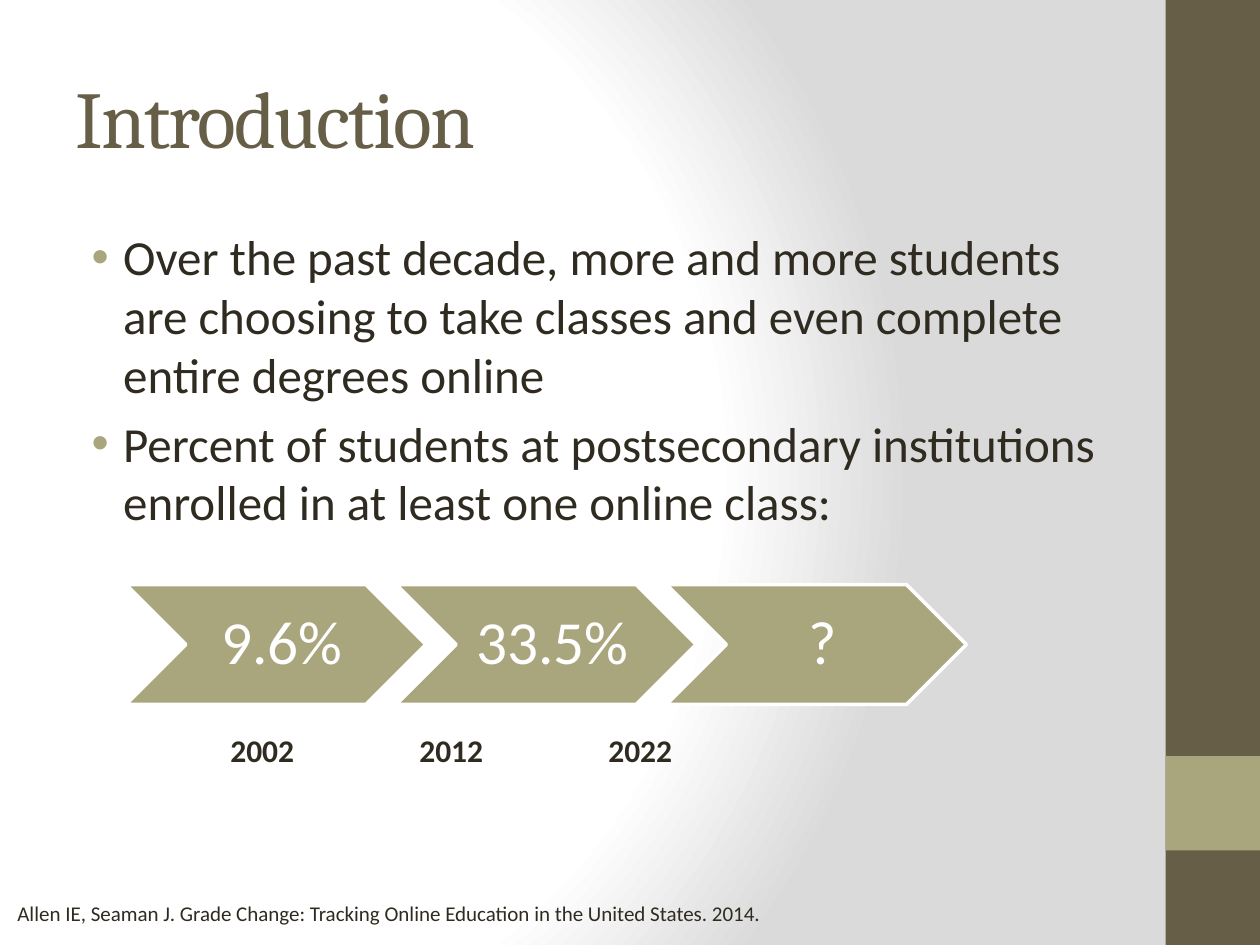
from dataclasses import dataclass, field

from pptx import Presentation
from pptx.dml.color import RGBColor
from pptx.enum.shapes import MSO_SHAPE
from pptx.enum.text import MSO_ANCHOR, PP_ALIGN
from pptx.oxml import parse_xml
from pptx.oxml.ns import nsdecls
from pptx.util import Inches, Pt

COLUMNS, ROWS = 40, 30
SLIDE_WIDTH, SLIDE_HEIGHT = Inches(10), Inches(7.5)

BROWN, OLIVE, INK, WHITE, GREY = "675E47", "A9A57C", "2F2B20", "FFFFFF", "DADADA"


@dataclass(frozen=True)
class Area:
    """A rectangle in grid columns and rows."""
    column: float
    row: float
    columns: float
    rows: float

    def lengths(self) -> tuple[int, ...]:
        across, down = SLIDE_WIDTH / COLUMNS, SLIDE_HEIGHT / ROWS
        return (round(self.column * across), round(self.row * down),
                round(self.columns * across), round(self.rows * down))


@dataclass(frozen=True)
class TextStyle:
    size: float
    color: str = INK
    font: str = "Calibri"
    bold: bool = False
    frame: dict = field(default_factory=dict)
    paragraph: dict = field(default_factory=dict)


HEADING = TextStyle(46, BROWN, "Cambria",
                    frame={"vertical_anchor": MSO_ANCHOR.MIDDLE})
BODY = TextStyle(28, paragraph={"space_before": Pt(5.6)})
CITATION = TextStyle(12)
YEARS = TextStyle(18, bold=True)
SHARE = TextStyle(
    35, WHITE,
    frame={"vertical_anchor": MSO_ANCHOR.MIDDLE, "margin_left": Inches(0.15),
           "margin_right": Inches(0.05), "margin_top": Inches(0.05),
           "margin_bottom": Inches(0.05)},
    paragraph={"alignment": PP_ALIGN.CENTER, "line_spacing": 0.9,
               "space_after": Pt(12.25)})

SIDE_BAR = Area(37, 0, 3, ROWS)
SIDE_ACCENT = Area(37, 24, 3, 3)
FIRST_CHEVRON = Area(4, 18.56, 9.52, 3.8)
CHEVRON_STEP = 8.58

BULLETS = [
    "Over the past decade, more and more students are choosing to take classes "
    "and even complete entire degrees online",
    "Percent of students at postsecondary institutions enrolled in at least one "
    "online class:",
]
SHARES = ["9.6%", "33.5%", "?"]


def rgb(color: str) -> RGBColor:
    return RGBColor.from_string(color)


def set_attributes(target, values: dict) -> None:
    for name, value in values.items():
        setattr(target, name, value)


def write(frame, lines: list[str], style: TextStyle) -> None:
    set_attributes(frame, {"word_wrap": True} | style.frame)
    for number, line in enumerate(lines):
        paragraph = frame.add_paragraph() if number else frame.paragraphs[0]
        set_attributes(paragraph, style.paragraph)
        run = paragraph.add_run()
        run.text = line
        set_attributes(run.font, {"size": Pt(style.size), "name": style.font,
                                  "bold": style.bold})
        run.font.color.rgb = rgb(style.color)


def add_text(slide, area: Area, lines: list[str], style: TextStyle):
    frame = slide.shapes.add_textbox(*area.lengths()).text_frame
    write(frame, lines, style)
    return frame


def add_block(slide, preset: MSO_SHAPE, area: Area, fill: str):
    block = slide.shapes.add_shape(preset, *area.lengths())
    block.shadow.inherit = False
    block.fill.solid()
    block.fill.fore_color.rgb = rgb(fill)
    block.line.fill.background()
    return block


def add_chevron(slide, position: int, share: str) -> None:
    first = FIRST_CHEVRON
    area = Area(first.column + position * CHEVRON_STEP, first.row,
                first.columns, first.rows)
    chevron = add_block(slide, MSO_SHAPE.CHEVRON, area, OLIVE)
    chevron.line.color.rgb = rgb(WHITE)
    chevron.line.width = Pt(2)
    write(chevron.text_frame, [share], SHARE)


def add_bullet(paragraph) -> None:
    properties = paragraph._p.get_or_add_pPr()
    properties.set("marL", str(Inches(0.38)))
    properties.set("indent", str(Inches(-0.25)))
    for xml in (f'<a:buClr {nsdecls("a")}><a:srgbClr val="{OLIVE}"/></a:buClr>',
                f'<a:buFont {nsdecls("a")} typeface="Arial"/>',
                f'<a:buChar {nsdecls("a")} char="•"/>'):
        properties.append(parse_xml(xml))


def set_radial_background(slide) -> None:
    stops = "".join(f'<a:gs pos="{share * 1000}"><a:srgbClr val="{color}"/></a:gs>'
                    for share, color in ((0, WHITE), (75, WHITE), (100, GREY)))
    slide.element.cSld.insert(0, parse_xml(
        f'<p:bg {nsdecls("p", "a")}><p:bgPr><a:gradFill rotWithShape="1">'
        f'<a:gsLst>{stops}</a:gsLst><a:path path="circle">'
        '<a:fillToRect l="20000" t="50000" r="100000" b="50000"/></a:path>'
        '</a:gradFill><a:effectLst/></p:bgPr></p:bg>'))


def main() -> None:
    deck = Presentation()
    deck.slide_width, deck.slide_height = SLIDE_WIDTH, SLIDE_HEIGHT
    slide = deck.slides.add_slide(deck.slide_layouts[6])
    set_radial_background(slide)

    add_block(slide, MSO_SHAPE.RECTANGLE, SIDE_BAR, BROWN)
    add_block(slide, MSO_SHAPE.RECTANGLE, SIDE_ACCENT, OLIVE)

    heading = add_text(slide, Area(2, 1.2, 33.32, 5), ["Introduction"], HEADING)
    heading.paragraphs[0].runs[0].font._element.set("spc", "-100")

    body = add_text(slide, Area(2, 7, 33.32, 21), BULLETS, BODY)
    for paragraph in body.paragraphs:
        add_bullet(paragraph)

    add_text(slide, Area(0.16, 28.4, 38.16, 1.2),
             ["Allen IE, Seaman J. Grade Change: Tracking Online Education "
              "in the United States. 2014."], CITATION)

    for position, share in enumerate(SHARES):
        add_chevron(slide, position, share)
    add_text(slide, Area(6.92, 23, 24.68, 1.6), ["2002\t\t2012\t\t2022"], YEARS)

    deck.save("out.pptx")


if __name__ == "__main__":
    main()
